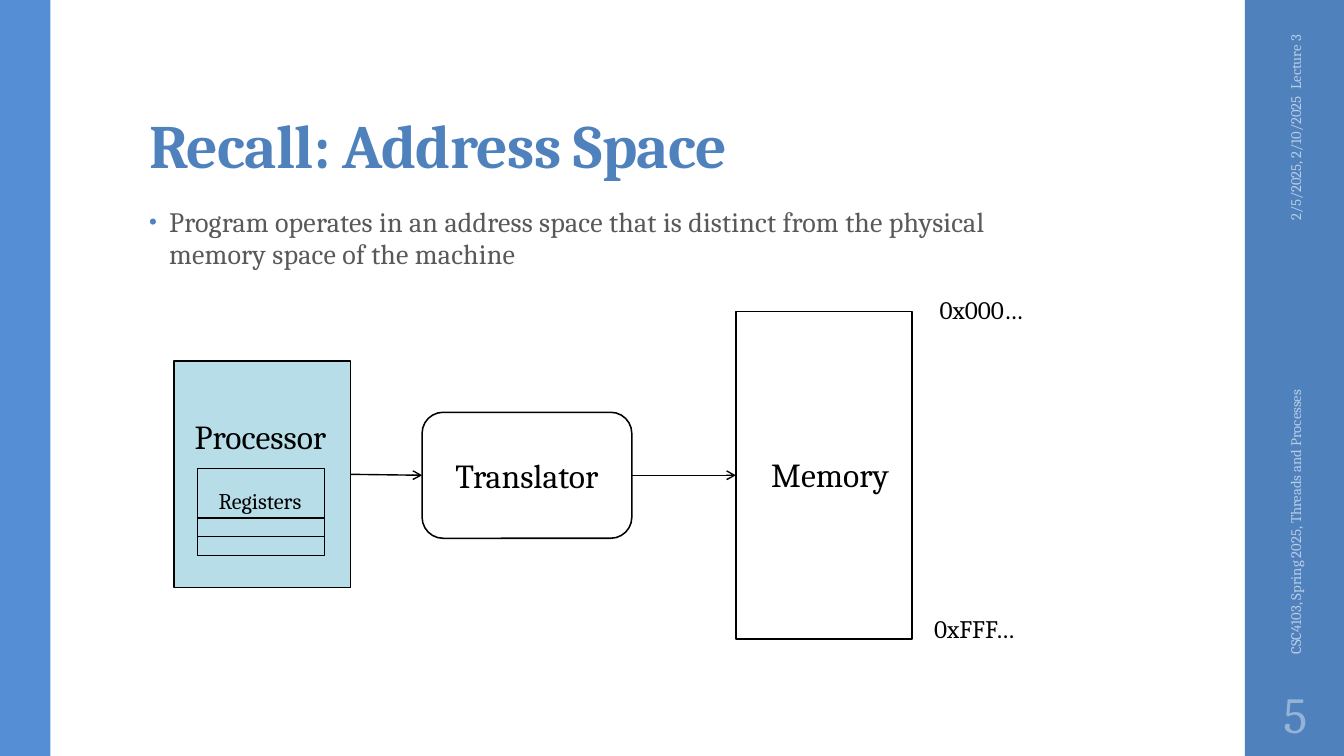
"""Build the address space recall slide."""
from lxml import etree
from pptx import Presentation
from pptx.dml.color import RGBColor
from pptx.enum.shapes import MSO_CONNECTOR, MSO_SHAPE
from pptx.enum.text import MSO_ANCHOR, PP_ALIGN
from pptx.oxml.ns import qn
from pptx.util import Pt

RECT = MSO_SHAPE.RECTANGLE
ROUNDED = MSO_SHAPE.FLOWCHART_ALTERNATE_PROCESS
STRAIGHT = MSO_CONNECTOR.STRAIGHT
TOP, MIDDLE, BOTTOM = MSO_ANCHOR.TOP, MSO_ANCHOR.MIDDLE, MSO_ANCHOR.BOTTOM
LEFT, CENTER, RIGHT = PP_ALIGN.LEFT, PP_ALIGN.CENTER, PP_ALIGN.RIGHT
LEFT_SIDE, RIGHT_SIDE = 1, 3

THEME = {
    "font": "Cambria",
    "blue": "4F81BD", "light blue": "558ED5", "pale blue": "B9CDE5",
    "number blue": "95B3D7", "aqua": "B7DEE8",
    "grey": "595959", "black": "000000", "white": "FFFFFF",
    "title": 44, "number": 36, "part": 24, "body": 20,
    "address": 18, "register": 16, "footer": 10.5,
}

PAGE_SIZE = (960, 540)
BARS = [((889.2, 0, 72, 540), "blue"), ((0, 0, 36, 540), "light blue")]
TITLE = ("Recall: Address Space", (99.4, 23, 763.2, 110.2))
BODY = ("Program operates in an address space that is distinct from the "
        "physical memory space of the machine", (99.4, 144, 676.8, 342.7))
SIDE_NOTES = [
    ("2/5/2025, 2/10/2025  Lecture 3", (850.3, 78.5, 149.8, 28.8), RIGHT),
    ("CSC4103, Spring 2025, Threads and Processes",
     (784.1, 319, 282.2, 28.8), LEFT),
]
PAGE_NUMBER = ("5", (889.2, 486, 72, 46.8))
PARTS = {
    "Memory": (RECT, (525.6, 222.5, 126, 234), None, 1),
    "Processor": (RECT, (124.3, 257.8, 126, 162), "aqua", 1),
    "Translator": (ROUNDED, (301.5, 294.5, 149.8, 90), "white", 1.1),
}
FLOW = ["Processor", "Translator", "Memory"]
LABELS = [
    ("Processor", (131, 293.8, 110.2, 36), "part"),
    ("Memory", (543.6, 320.4, 98.6, 36), "part"),
    ("0x000…", (659.5, 206.6, 82.8, 28.8), "address"),
    ("0xFFF…", (651.6, 434.9, 88.6, 28.8), "address"),
]
REGISTER_BOXES = [(141.1, 334.8, 90.7, 61.9), (141.1, 370.1, 90.7, 13.3)]
REGISTER_LABEL = ("Registers", (149, 344.2, 73.4, 26.6), "register")


def color(name):
    return RGBColor.from_string(THEME[name])


def points(values):
    return [Pt(value) for value in values]


def add_box(shapes, kind, place, fill=None, line_width=None):
    box = shapes.add_shape(kind, *points(place))
    box.shadow.inherit = False
    if fill:
        box.fill.solid()
        box.fill.fore_color.rgb = color(fill)
    else:
        box.fill.background()
    if line_width:
        box.line.color.rgb = color("black")
        box.line.width = Pt(line_width)
    else:
        box.line.fill.background()
    return box


def write(box, text, size, ink="black", align=CENTER, anchor=MIDDLE,
          wrap=True, bold=False, spacing=0):
    frame = box.text_frame
    frame.text = text
    frame.word_wrap = wrap
    frame.vertical_anchor = anchor
    para = frame.paragraphs[0]
    para.alignment = align
    span = para.runs[0]
    span.font.name = THEME["font"]
    span.font.size = Pt(THEME[size])
    span.font.bold = bold
    span.font.color.rgb = color(ink)
    if spacing:
        span.font._element.set("spc", str(spacing))
    return para


def add_text(shapes, text, place, size, **style):
    box = shapes.add_textbox(*points(place))
    return box, write(box, text, size, **style)


def add_bullet(para):
    props = para._p.get_or_add_pPr()
    props.set("marL", str(Pt(14.4)))
    props.set("indent", str(-Pt(14.4)))
    tint = etree.SubElement(props, qn("a:buClr"))
    etree.SubElement(tint, qn("a:srgbClr"), val=THEME["blue"])
    etree.SubElement(props, qn("a:buSzPct"), val="80000")
    etree.SubElement(props, qn("a:buFont"), typeface="Arial")
    etree.SubElement(props, qn("a:buChar"), char="•")


def add_arrow(shapes, start, end):
    arrow = shapes.add_connector(STRAIGHT, 0, 0, 0, 0)
    arrow.begin_connect(start, RIGHT_SIDE)
    arrow.end_connect(end, LEFT_SIDE)
    arrow.line.color.rgb = color("black")
    arrow.line.width = Pt(1)
    etree.SubElement(arrow.line._get_or_add_ln(), qn("a:tailEnd"), type="arrow")
    etree.SubElement(arrow._element.spPr, qn("a:effectLst"))


def add_frame_text(shapes):
    for place, fill in BARS:
        add_box(shapes, RECT, place, fill)
    box, para = add_text(shapes, *TITLE, "title", ink="blue", align=LEFT,
                         anchor=BOTTOM, bold=True, spacing=-50)
    box.text_frame.margin_top = Pt(2.2)
    para.line_spacing = 0.9
    box, para = add_text(shapes, *BODY, "body", ink="grey", align=LEFT,
                         anchor=TOP, spacing=10)
    para.line_spacing = 0.95
    para.space_before, para.space_after = Pt(14), Pt(2)
    add_bullet(para)
    for text, place, align in SIDE_NOTES:
        box, para = add_text(shapes, text, place, "footer", ink="pale blue",
                             align=align)
        box.rotation = 270
    box, para = add_text(shapes, *PAGE_NUMBER, "number", ink="number blue")
    box.text_frame.margin_left = box.text_frame.margin_right = Pt(3.6)


def add_diagram(shapes):
    parts = {name: add_box(shapes, *look) for name, look in PARTS.items()}
    write(parts["Translator"], "Translator", "part")
    for label in LABELS:
        add_text(shapes, *label, anchor=TOP, wrap=False)
    for start, end in zip(FLOW, FLOW[1:]):
        add_arrow(shapes, parts[start], parts[end])
    registers = shapes.add_group_shape().shapes
    for place in REGISTER_BOXES:
        add_box(registers, RECT, place, line_width=1)
    add_text(registers, *REGISTER_LABEL, anchor=TOP, wrap=False)


def main():
    deck = Presentation()
    deck.slide_width, deck.slide_height = points(PAGE_SIZE)
    page = deck.slides.add_slide(deck.slide_layouts[6])
    add_frame_text(page.shapes)
    add_diagram(page.shapes)
    deck.save("out.pptx")


if __name__ == "__main__":
    main()
